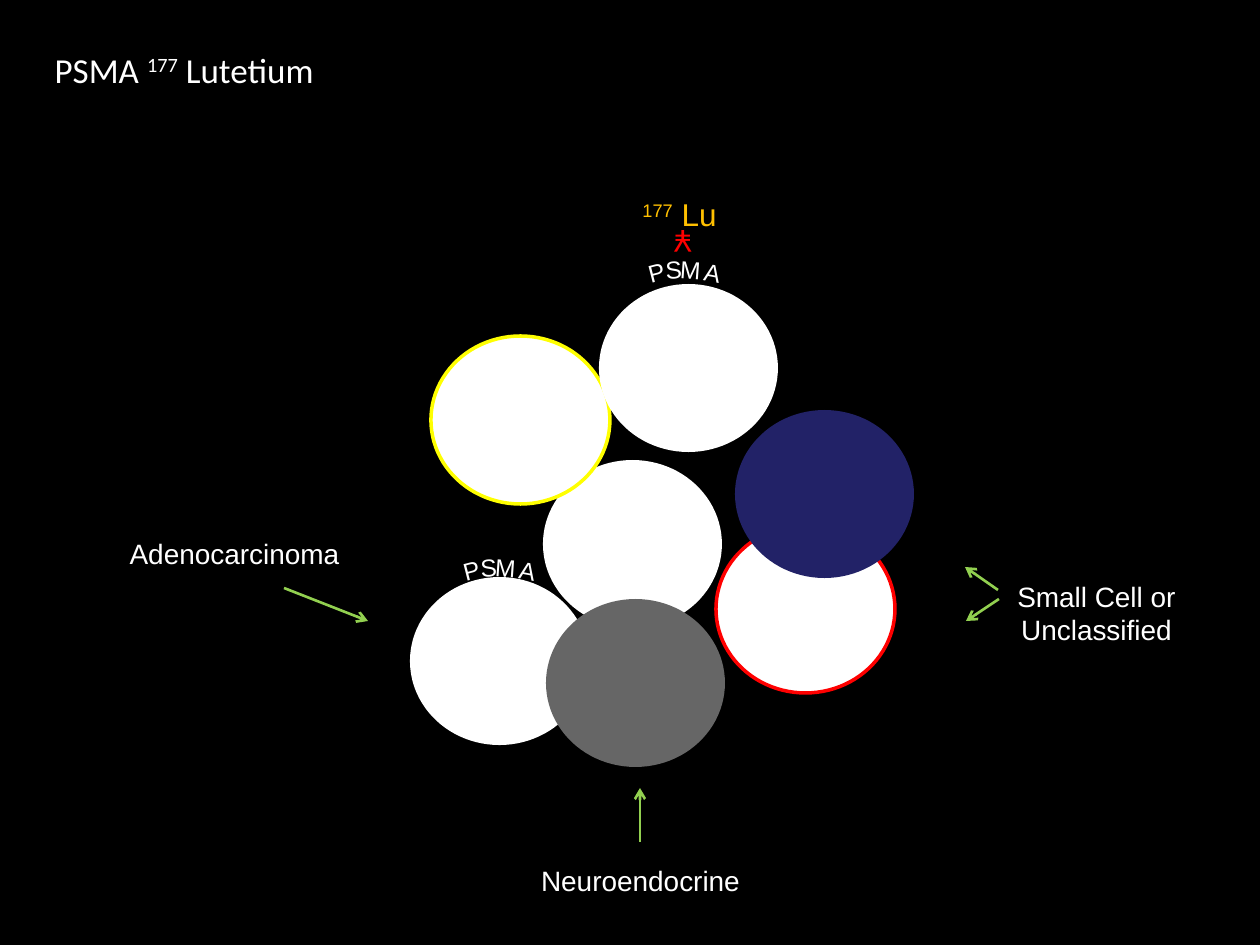
from pptx import Presentation
from pptx.dml.color import RGBColor
from pptx.enum.shapes import MSO_CONNECTOR as CONN, MSO_SHAPE as SHAPE
from pptx.enum.text import MSO_ANCHOR as ANCHOR, MSO_AUTO_SIZE as AUTO, PP_ALIGN as ALIGN
from pptx.oxml.ns import qn
from pptx.util import Emu, Pt
from lxml.etree import SubElement

SCALE = 914400 / 126
WHITE, RED, YELLOW, GREEN = "FFFFFF", "FF0000", "FFFF00", "92D050"


def px(n):
    return Emu(round(n * SCALE))


def rgb(value):
    return RGBColor.from_string(value)


class Board:
    font = "Arial"

    def __init__(self, prs, back):
        self.s = prs.slides.add_slide(prs.slide_layouts[5])
        fill = self.s.background.fill
        fill.solid()
        fill.fore_color.rgb = rgb(back)

    def fill_text(self, sp, runs, size, color, align=ALIGN.LEFT, font=None):
        tf = sp.text_frame
        frame = {"word_wrap": True, "auto_size": AUTO.NONE, "vertical_anchor": ANCHOR.TOP}
        for name, value in frame.items():
            setattr(tf, name, value)
        p = tf.paragraphs[0]
        p.alignment = align
        for text, raised in runs:
            r = p.add_run()
            r.text = text
            for name, value in {"name": font or self.font, "size": Pt(size)}.items():
                setattr(r.font, name, value)
            r.font.color.rgb = rgb(color)
            if raised:
                r.font._element.set("baseline", "30000")

    def title(self, box, runs, size, color, font):
        sp = self.s.shapes.title
        for name, value in zip(("left", "top", "width", "height"), box):
            setattr(sp, name, px(value))
        self.fill_text(sp, runs, size, color, font=font)

    def text(self, box, runs, size, color, align=ALIGN.LEFT, turn=0):
        sp = self.s.shapes.add_textbox(*map(px, box))
        sp.rotation = turn
        self.fill_text(sp, runs, size, color, align)

    def label(self, x, y, h, text):
        self.text((x, y, 263, h), [(text, False)], 16, WHITE, ALIGN.CENTER)

    def cell(self, x, y, color, edge=None):
        sp = self.s.shapes.add_shape(SHAPE.OVAL, *map(px, (x, y, 179, 168)))
        sp.shadow.inherit = False
        sp.fill.solid()
        sp.fill.fore_color.rgb = rgb(color)
        if edge:
            sp.line.color.rgb = rgb(edge)
            sp.line.width = Pt(2)
        else:
            sp.line.fill.background()

    def psma(self, x, y):
        letters = [("P", 0, 3, 39, -14.4), ("S", 17, 0, 43, -3.9),
                   ("M", 32, 0, 39, 4.1), ("A", 56, 3, 39, 10.8)]
        for letter, dx, dy, w, turn in letters:
            self.text((x + dx, y + dy, w, 43), [(letter, False)], 14, WHITE, turn=turn)

    def arrow(self, *ends):
        c = self.s.shapes.add_connector(CONN.STRAIGHT, *map(px, ends))
        c.line.color.rgb = rgb(GREEN)
        c.line.width = Pt(1.5)
        props = c._element.spPr
        SubElement(props.find(qn("a:ln")), qn("a:tailEnd"), type="arrow")
        SubElement(props, qn("a:effectLst"))


def main():
    prs = Presentation()
    prs.slide_width, prs.slide_height = px(1260), px(945)
    b = Board(prs, "000000")

    b.title((42, 42, 1155, 54), [("PSMA ", False), ("177", True), (" Lutetium", False)],
            20, WHITE, "Calibri")

    cells = [(410, 577, WHITE), (543, 460, WHITE), (431, 336, WHITE, YELLOW),
             (716, 525, WHITE, RED), (599, 284, WHITE), (735, 410, "222267"),
             (546, 599, "666666")]
    for cell in cells:
        b.cell(*cell)

    for x, y in [(636, 248), (451, 546)]:
        b.psma(x, y)
    b.text((662, 218, 42, 50), [("¥", False)], 18, RED, turn=180)
    b.text((630, 189, 131, 50), [("177", True), (" Lu", False)], 18, "FFC000")

    labels = [(965, 573, 81, "Small Cell or Unclassified"),
              (509, 857, 47, "Neuroendocrine"), (103, 530, 47, "Adenocarcinoma")]
    for label in labels:
        b.label(*label)

    arrows = [(998, 590, 965, 567), (999, 599, 966, 621),
              (640, 842, 640, 788), (284, 588, 368, 621)]
    for ends in arrows:
        b.arrow(*ends)

    prs.save("out.pptx")


if __name__ == "__main__":
    main()
